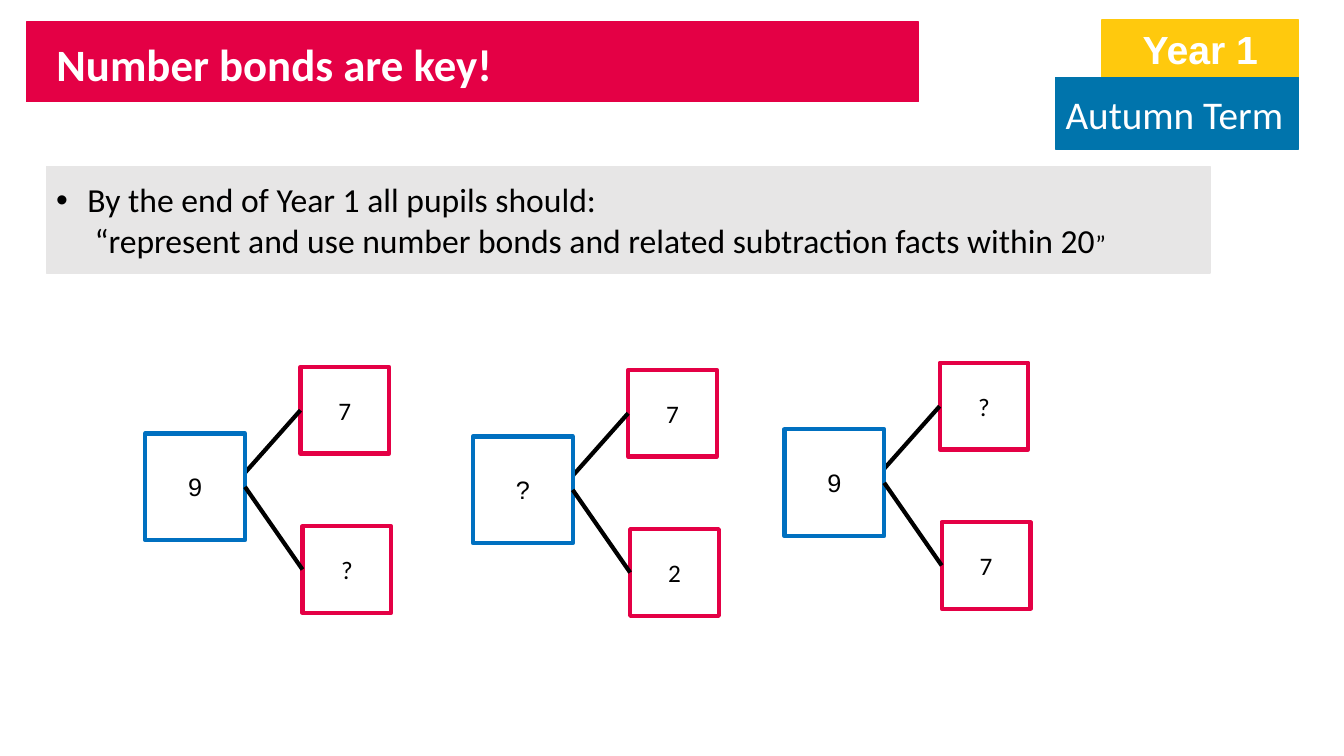
from lxml import etree
from pptx import Presentation
from pptx.dml.color import RGBColor
from pptx.enum.shapes import MSO_CONNECTOR, MSO_SHAPE
from pptx.enum.text import MSO_ANCHOR, MSO_AUTO_SIZE, PP_ALIGN
from pptx.oxml.ns import qn
from pptx.util import Inches, Pt

RECTANGLE = MSO_SHAPE.RECTANGLE
STRAIGHT = MSO_CONNECTOR.STRAIGHT
TOP, MIDDLE = MSO_ANCHOR.TOP, MSO_ANCHOR.MIDDLE
LEFT, CENTER = PP_ALIGN.LEFT, PP_ALIGN.CENTER
LEFT_SIDE, RIGHT_SIDE = 1, 3
RED, BLUE, BLACK, WHITE, GREY = "E40045", "0070C0", "000000", "FFFFFF", "E7E6E6"


def color(value):
    return RGBColor.from_string(value)


def add_box(place, fill, line, width=1, text="", size=18, font="Calibri",
            ink=BLACK, align=CENTER, anchor=MIDDLE):
    box = slide.shapes.add_shape(RECTANGLE, *[Inches(v) for v in place])
    box.shadow.inherit = False
    box.fill.solid()
    box.fill.fore_color.rgb = color(fill)
    box.line.color.rgb = color(line)
    box.line.width = Pt(width)
    frame = box.text_frame
    frame.vertical_anchor = anchor
    frame.text = text
    for paragraph in frame.paragraphs:
        paragraph.alignment = align
        paragraph.font.size = Pt(size)
        paragraph.font.name = font
        paragraph.font.color.rgb = color(ink)
    return box


prs = Presentation()
prs.slide_width = Inches(13.33)
prs.slide_height = Inches(7.5)
slide = prs.slides.add_slide(prs.slide_layouts[5])

title = slide.shapes.title
title.left, title.top = Inches(0.46), Inches(0.31)
title.width, title.height = Inches(4.56), Inches(0.64)
heading = title.text_frame
heading.text = "Number bonds are key!"
heading.word_wrap = False
heading.auto_size = MSO_AUTO_SIZE.SHAPE_TO_FIT_TEXT
heading.vertical_anchor = TOP
heading_line = heading.paragraphs[0]
heading_line.alignment = LEFT
heading_line.font.size = Pt(32)
heading_line.font.bold = True
heading_line.font.name = "Calibri"
heading_line.font.color.rgb = color(WHITE)

banner = add_box((0.26, 0.22, 8.85, 0.79), RED, RED)
title._element.addprevious(banner._element)

year = add_box((10.93, 0.2, 1.95, 0.57), "FFC90D", "FFC90D", text="Year 1",
               size=28, font="Arial", ink=WHITE, anchor=TOP)
year.text_frame.paragraphs[0].font.bold = True
add_box((10.47, 0.77, 2.41, 0.71), "0074AC", "0074AC", text="Autumn Term",
        size=28, ink=WHITE, align=LEFT)

bonds = [
    (1.44, 4.3, "9", "7", "?"),
    (4.69, 4.33, "?", "7", "2"),
    (7.78, 4.26, "9", "?", "7"),
]
for left, top, whole_text, upper_text, lower_text in bonds:
    upper = add_box((left + 1.54, top - 0.66, 0.88, 0.86), WHITE, RED, 3, upper_text)
    lower = add_box((left + 1.56, top + 0.92, 0.88, 0.86), WHITE, RED, 3, lower_text)
    whole_right = Inches(left + 0.99)
    links = []
    for part, end_offset in ((upper, 0.39), (lower, 0.53)):
        link = slide.shapes.add_connector(
            STRAIGHT, part.left, part.top, whole_right, Inches(top + end_offset))
        link.begin_connect(part, LEFT_SIDE)
        link.line.color.rgb = color(BLACK)
        link.line.width = Pt(3)
        etree.SubElement(link._element.spPr, qn("a:effectLst"))
        links.append(link)
    whole = add_box((left, top, 0.99, 1.06), WHITE, BLUE, 3, whole_text, font="Arial")
    lower_link = links[1]
    lower_link.end_connect(whole, RIGHT_SIDE)
    whole._element.addnext(lower_link._element)

goal = add_box((0.46, 1.65, 11.54, 1.06), GREY, GREY, size=24, align=LEFT,
               text="By the end of Year 1 all pupils should:\n"
                    "“represent and use number bonds and related subtraction facts within 20")
intro, quote = goal.text_frame.paragraphs
intro_props = intro._p.get_or_add_pPr()
intro_props.set("marL", str(Inches(0.31)))
intro_props.set("indent", str(-Inches(0.31)))
bullet_font = etree.Element(qn("a:buFont"), typeface="Arial")
bullet = etree.Element(qn("a:buChar"), char="•")
intro_props.insert(0, bullet_font)
bullet_font.addnext(bullet)
quote._p.get_or_add_pPr().set("marL", str(Inches(0.38)))
closing_mark = quote.add_run()
closing_mark.text = "”"
closing_mark.font.size = Pt(18)

prs.save("out.pptx")
